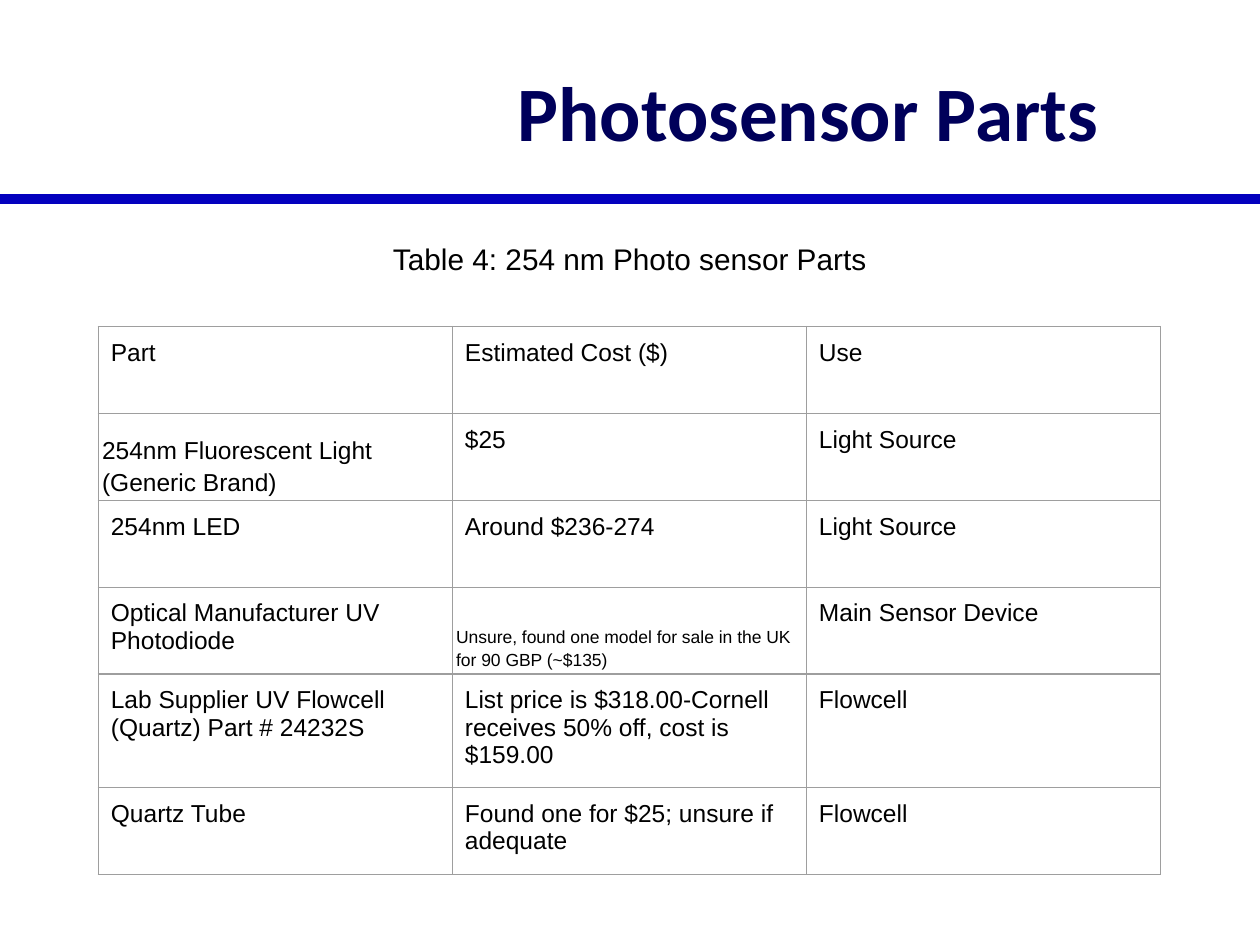
from lxml.etree import SubElement
from pptx import Presentation
from pptx.dml.color import RGBColor
from pptx.enum.shapes import MSO_CONNECTOR
from pptx.enum.text import MSO_ANCHOR as Anchor, PP_ALIGN as Align
from pptx.oxml import parse_xml
from pptx.oxml.ns import nsdecls, qn
from pptx.util import Inches, Pt

NAVY = RGBColor(0x00, 0x00, 0x5A)
BLUE = RGBColor(0x03, 0x00, 0xBE)
BLACK = RGBColor(0x00, 0x00, 0x00)
GREY = RGBColor(0x9E, 0x9E, 0x9E)

PARTS = [
    ("Part", "Estimated Cost ($)", "Use"),
    ("254nm Fluorescent Light (Generic Brand)", "$25", "Light Source"),
    ("254nm LED", "Around $236-274", "Light Source"),
    ("Optical Manufacturer UV Photodiode",
     "Unsure, found one model for sale in the UK for 90 GBP (~$135)",
     "Main Sensor Device"),
    ("Lab Supplier UV Flowcell (Quartz) Part # 24232S",
     "List price is $318.00-Cornell receives 50% off, cost is $159.00",
     "Flowcell"),
    ("Quartz Tube", "Found one for $25; unsure if adequate", "Flowcell"),
]
# Cells set low and tight, with their text size
LOW_CELLS = {(1, 0): 14, (3, 1): 10}
COLUMN_WIDTH, ROW_HEIGHT = Inches(2.81), Inches(0.69)


def write(holder, text, size, font="Arial", color=BLACK, bold=False, inset=0.1):
    """Fill a text frame or table cell with one run and return its paragraph."""
    holder.margin_left = holder.margin_right = Inches(inset)
    holder.margin_top = holder.margin_bottom = Inches(inset)
    holder.word_wrap = True
    frame = getattr(holder, "text_frame", holder)
    para = frame.paragraphs[0]
    span = para.add_run()
    span.text = text
    span.font.size, span.font.name = Pt(size), font
    span.font.bold, span.font.color.rgb = bold, color
    return para


def outline(cell):
    """Draw a thin grey border on all four sides of a cell."""
    props = cell._tc.get_or_add_tcPr()
    for position, side in enumerate(("lnL", "lnR", "lnT", "lnB")):
        props.insert(position, parse_xml(
            f'<a:{side} {nsdecls("a")} w="{Pt(0.75)}"><a:solidFill>'
            f'<a:srgbClr val="{GREY}"/></a:solidFill></a:{side}>'))


deck = Presentation()
deck.slide_width, deck.slide_height = Inches(10), Inches(7.5)
page = deck.slides.add_slide(deck.slide_layouts[6])

# Rule below the title
rule_y = Inches(1.58)
rule = page.shapes.add_connector(
    MSO_CONNECTOR.STRAIGHT, 0, rule_y, deck.slide_width, rule_y)
rule.line.color.rgb, rule.line.width = BLUE, Pt(6)
SubElement(rule._element.spPr, qn("a:effectLst"))

# Title
title = page.shapes.add_textbox(
    Inches(3.08), Inches(0.25), Inches(6.67), Inches(1.25)).text_frame
title.vertical_anchor = Anchor.MIDDLE
write(title, "Photosensor Parts", 44, "Calibri", NAVY, True).alignment = Align.CENTER

# Parts table
table = page.shapes.add_table(
    len(PARTS), len(PARTS[0]), Inches(0.78), Inches(2.59),
    COLUMN_WIDTH * len(PARTS[0]), ROW_HEIGHT * len(PARTS)).table
table.first_row = table.horz_banding = False
for column in table.columns:
    column.width = COLUMN_WIDTH
for row_index, texts in enumerate(PARTS):
    table.rows[row_index].height = ROW_HEIGHT
    for column_index, text in enumerate(texts):
        cell = table.cell(row_index, column_index)
        cell.fill.background()
        outline(cell)
        low_size = LOW_CELLS.get((row_index, column_index))
        if low_size:
            para = write(cell, text, low_size, inset=0.03)
            para.line_spacing, para.space_after = 1.15, Pt(10)
            cell.vertical_anchor = Anchor.BOTTOM
        else:
            write(cell, text, 14)

# Table caption
caption = page.shapes.add_textbox(
    Inches(0.9), Inches(1.81), Inches(8.2), Inches(0.78)).text_frame
write(caption, "Table 4: 254 nm Photo sensor Parts", 17).alignment = Align.CENTER

deck.save("out.pptx")
